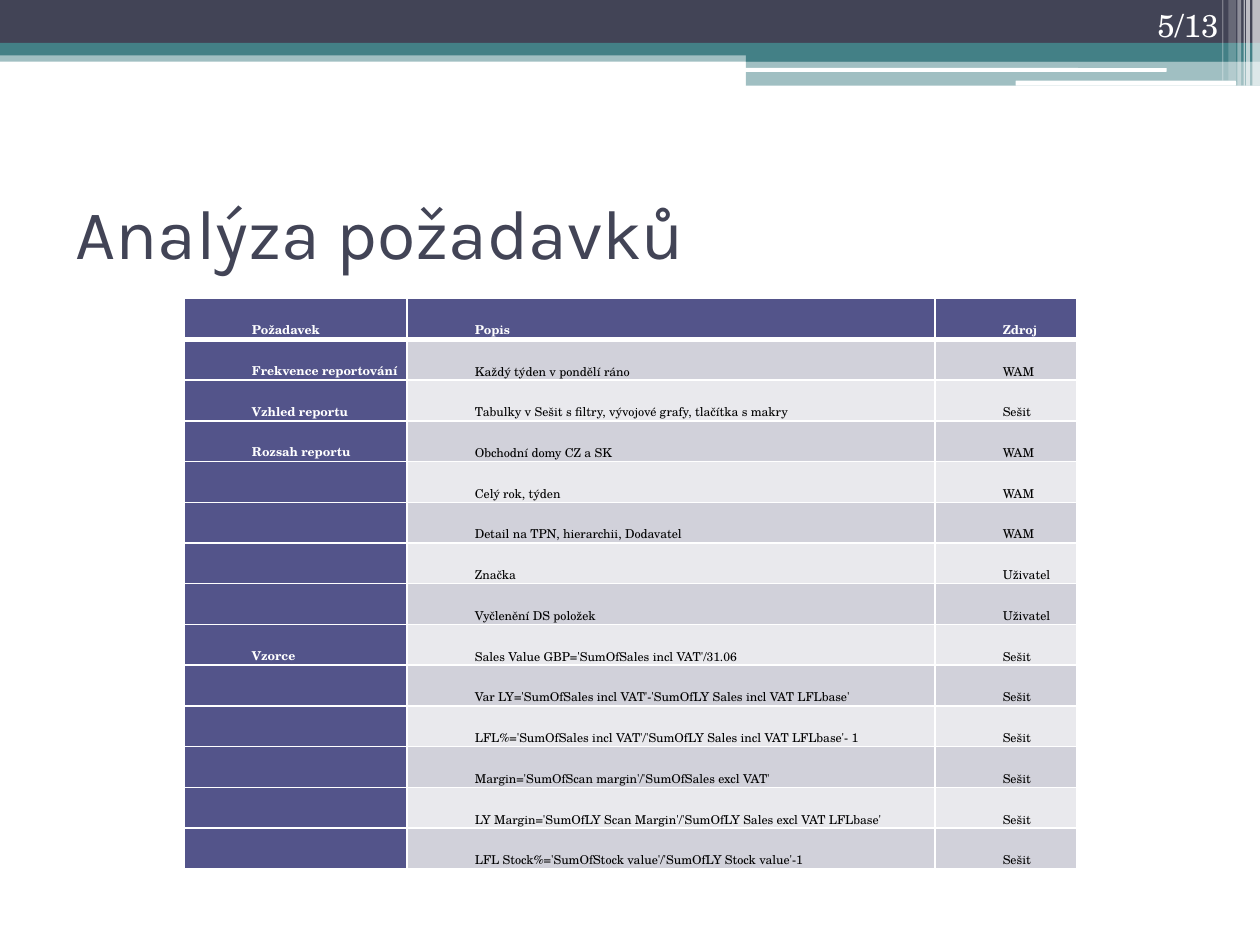
from lxml.etree import SubElement
from pptx import Presentation
from pptx.dml.color import RGBColor
from pptx.enum.shapes import MSO_SHAPE
from pptx.enum.text import MSO_ANCHOR, PP_ALIGN
from pptx.oxml.ns import qn
from pptx.util import Inches, Pt

COLORS = {
    "dark": "424456", "teal": "438086", "white": "FFFFFF", "black": "000000",
    "violet": "53548A", "band_dark": "D1D1DA", "band_light": "E9E9ED",
}
BODY_FONT, TITLE_FONT = "TeX Gyre Schola", "Karla"
COLUMNS = (1.77, 4.19, 1.13)
ROWS = [
    ("Požadavek", "Popis", "Zdroj"),
    ("Frekvence reportování", "Každý týden v pondělí ráno", "WAM"),
    ("Vzhled reportu", "Tabulky v Sešit s filtry, vývojové grafy, tlačítka s makry", "Sešit"),
    ("Rozsah reportu", "Obchodní domy CZ a SK", "WAM"),
    ("", "Celý rok, týden", "WAM"),
    ("", "Detail na TPN, hierarchii, Dodavatel", "WAM"),
    ("", "Značka", "Uživatel"),
    ("", "Vyčlenění DS položek", "Uživatel"),
    ("Vzorce", "Sales Value GBP='SumOfSales incl VAT'/31.06", "Sešit"),
    ("", "Var LY='SumOfSales incl VAT'-'SumOfLY Sales incl VAT LFLbase'", "Sešit"),
    ("", "LFL%='SumOfSales incl VAT'/'SumOfLY Sales incl VAT LFLbase'- 1", "Sešit"),
    ("", "Margin='SumOfScan margin'/'SumOfSales excl VAT'", "Sešit"),
    ("", "LY Margin='SumOfLY Scan Margin'/'SumOfLY Sales excl VAT LFLbase'", "Sešit"),
    ("", "LFL Stock%='SumOfStock value'/'SumOfLY Stock value'-1", "Sešit"),
]


def rgb(name):
    return RGBColor.from_string(COLORS[name])


def add_span(para, text, size, font, color, bold=False):
    span = para.add_run()
    span.text = text
    span.font.size = Pt(size)
    span.font.name = font
    span.font.bold = bold
    span.font.color.rgb = rgb(color)


def add_bar(page, box, color, opacity=100, kind=MSO_SHAPE.RECTANGLE):
    bar = page.shapes.add_shape(kind, *map(Inches, box))
    bar.shadow.inherit = False
    bar.line.fill.background()
    bar.fill.solid()
    bar.fill.fore_color.rgb = rgb(color)
    if opacity < 100:
        tone = bar._element.spPr.find(qn("a:solidFill"))[0]
        SubElement(tone, qn("a:alpha")).set("val", str(opacity * 1000))


def add_header(page, box):
    left, top, width, height = box
    split = 0.592 * width
    # Full-width bands, then the raised block on the right
    for x, y, tall, color, opacity in (
        (0, 0.4, 0.09, "teal", 50), (0, 0, 0.34, "dark", 100), (0, 0.34, 0.1, "teal", 100),
        (split, 0.39, 0.1, "teal", 100), (split, 0.48, 0.2, "teal", 50),
    ):
        add_bar(page, (left + x, top + y, width - x, tall), color, opacity)
    # White rounded strips
    for x, y, wide, tall in ((5.91, 0.54, 3.35, 0.03), (8.06, 0.64, 1.75, 0.04)):
        add_bar(page, (left + x, top + y, wide, tall), "white", kind=MSO_SHAPE.ROUNDED_RECTANGLE)
    # Translucent stripes at the right edge
    for x, wide, tall, opacity in (
        (9.94, 0.06, height, 65), (9.89, 0.03, height, 65), (9.87, 0.01, height, 60),
        (9.82, 0.03, height, 40), (9.75, 0.06, 0.64, 20), (9.7, 0.01, 0.64, 30),
    ):
        add_bar(page, (left + x, top, wide, tall), "white", opacity)


def add_label(page, box, text, size, font, color, anchor, align=PP_ALIGN.LEFT):
    frame = page.shapes.add_textbox(*map(Inches, box)).text_frame
    frame.word_wrap = True
    frame.vertical_anchor = anchor
    para = frame.paragraphs[0]
    para.alignment = align
    add_span(para, text, size, font, color)


def set_borders(cell, bottom):
    properties = cell._tc.get_or_add_tcPr()
    for index, (side, weight) in enumerate(zip("LRTB", (1, 1, 1, bottom))):
        line = properties.makeelement(qn(f"a:ln{side}"), {"w": str(Pt(weight))})
        fill = SubElement(line, qn("a:solidFill"))
        SubElement(fill, qn("a:srgbClr")).set("val", COLORS["white"])
        properties.insert(index, line)


def fill_cell(cell, text, fill, color, bold):
    cell.fill.solid()
    cell.fill.fore_color.rgb = rgb(fill)
    cell.vertical_anchor = MSO_ANCHOR.BOTTOM
    cell.margin_left = cell.margin_right = Inches(0.04)
    cell.margin_top = cell.margin_bottom = 0
    if text:
        para = cell.text_frame.paragraphs[0]
        para.line_spacing = 1.5
        indent = para._p.get_or_add_pPr()
        indent.set("marL", "0")
        indent.set("indent", str(Inches(0.5)))
        add_span(para, text, 7, BODY_FONT, color, bold)


def add_requirements(page, box):
    frame = page.shapes.add_table(len(ROWS), len(COLUMNS), *map(Inches, box))
    table = frame.table
    for column, share in zip(table.columns, COLUMNS):
        column.width = Inches(box[2] * share / sum(COLUMNS))
    for r, texts in enumerate(ROWS):
        table.rows[r].height = Inches(box[3] / len(ROWS))
        for c, text in enumerate(texts):
            heading = r == 0 or c == 0
            band = "band_dark" if r % 2 else "band_light"
            cell = table.cell(r, c)
            fill_cell(cell, text, "violet" if heading else band,
                      "white" if heading else "black", heading)
            set_borders(cell, 3 if r == 0 else 1)


def main():
    deck = Presentation()
    deck.slide_width, deck.slide_height = Inches(10), Inches(7.5)
    page = deck.slides.add_slide(deck.slide_layouts[6])
    add_header(page, (0, 0, 10, 0.68))
    add_label(page, (0.5, 1.25, 9, 1.17), "Analýza požadavků", 40, TITLE_FONT, "dark",
              MSO_ANCHOR.MIDDLE)
    add_requirements(page, (1.46, 2.37, 7.09, 4.53))
    # Page number
    add_label(page, (8.94, 0, 0.83, 0.4), "5/13", 18, BODY_FONT, "white",
              MSO_ANCHOR.BOTTOM, PP_ALIGN.RIGHT)
    deck.save("out.pptx")


if __name__ == "__main__":
    main()
